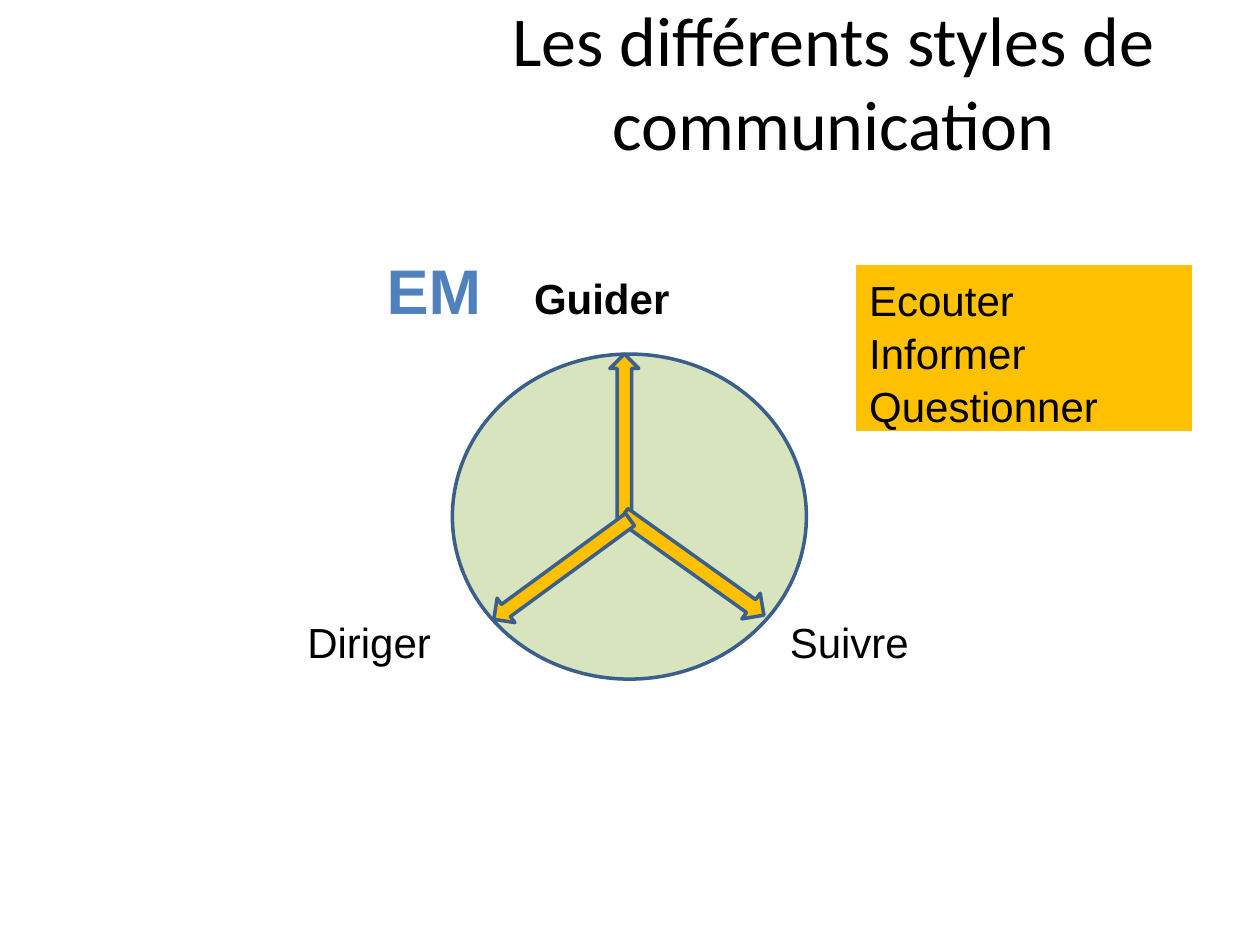
from dataclasses import dataclass

from pptx import Presentation
from pptx.dml.color import RGBColor
from pptx.enum.shapes import MSO_SHAPE
from pptx.enum.text import MSO_ANCHOR, MSO_AUTO_SIZE, PP_ALIGN
from pptx.util import Inches, Pt


@dataclass(frozen=True)
class Theme:
    ink: RGBColor = RGBColor(0, 0, 0)
    blue: RGBColor = RGBColor(0x4F, 0x81, 0xBD)
    edge: RGBColor = RGBColor(0x3A, 0x5F, 0x8C)
    green: RGBColor = RGBColor(0xD7, 0xE4, 0xBD)
    gold: RGBColor = RGBColor(0xFF, 0xC0, 0x00)
    head: int = 40
    mark: int = 36
    body: int = 24


THEME = Theme()
Box = tuple[float, float, float, float]


@dataclass(frozen=True)
class Form:
    kind: MSO_SHAPE
    box: Box
    fill: RGBColor = THEME.gold
    edge: RGBColor = THEME.edge
    width: float = 2
    turn: float = 0


@dataclass(frozen=True)
class Label:
    text: str
    box: Box
    size: int = THEME.body
    color: RGBColor = THEME.ink
    bold: bool = False


def place(box: Box) -> list[int]:
    return [Inches(v) for v in box]


def write(frame, text: str, size: int, color: RGBColor,
          bold: bool = False, name: str = "Arial",
          align: PP_ALIGN = PP_ALIGN.LEFT) -> None:
    frame.text = text
    frame.word_wrap = True
    for para in frame.paragraphs:
        para.alignment = align
        for run in para.runs:
            font = run.font
            font.name, font.size, font.bold = name, Pt(size), bold
            font.color.rgb = color


def draw(slide, form: Form):
    shape = slide.shapes.add_shape(form.kind, *place(form.box))
    shape.shadow.inherit = False
    shape.rotation = form.turn
    shape.fill.solid()
    shape.fill.fore_color.rgb = form.fill
    shape.line.color.rgb = form.edge
    shape.line.width = Pt(form.width)
    return shape


def label(slide, item: Label) -> None:
    frame = slide.shapes.add_textbox(*place(item.box)).text_frame
    write(frame, item.text, item.size, item.color, item.bold)


# Circle and its three arrows
WHEEL = [
    Form(MSO_SHAPE.FLOWCHART_CONNECTOR, (3.59, 2.81, 2.81, 2.58), THEME.green),
    Form(MSO_SHAPE.UP_ARROW, (4.84, 2.81, 0.23, 1.33)),
    Form(MSO_SHAPE.RIGHT_ARROW, (4.82, 4.36, 1.37, 0.25), turn=35.5),
    Form(MSO_SHAPE.LEFT_ARROW, (3.79, 4.4, 1.34, 0.24), turn=323.8),
]
PANEL = Form(MSO_SHAPE.RECTANGLE, (6.8, 2.11, 2.66, 1.31),
             edge=THEME.gold, width=0.75)
LABELS = [
    Label("Guider", (4.14, 2.11, 1.41, 0.51), bold=True),
    Label("Suivre", (6.17, 4.84, 1.33, 0.51)),
    Label("EM", (2.97, 1.95, 1.02, 0.71), THEME.mark, THEME.blue, True),
    Label("Diriger", (2.34, 4.84, 1.41, 0.51)),
]


def main() -> None:
    deck = Presentation()
    deck.slide_width, deck.slide_height = Inches(10), Inches(7.5)
    slide = deck.slides.add_slide(deck.slide_layouts[5])

    # Title
    title = slide.shapes.title
    title.left, title.top, title.width, title.height = place(
        (2.96, 0.17, 7.31, 0.94))
    frame = title.text_frame
    write(frame, "Les différents styles de communication", THEME.head,
          THEME.ink, name="Calibri", align=PP_ALIGN.CENTER)
    frame.auto_size = MSO_AUTO_SIZE.NONE
    frame.vertical_anchor = MSO_ANCHOR.MIDDLE

    for form in WHEEL:
        draw(slide, form)
    for item in LABELS:
        label(slide, item)

    # Skills panel
    frame = draw(slide, PANEL).text_frame
    write(frame, "Ecouter\nInformer\nQuestionner", THEME.body, THEME.ink)
    frame.vertical_anchor = MSO_ANCHOR.TOP
    for para in frame.paragraphs:
        para.line_spacing = 1.05

    deck.save("out.pptx")


if __name__ == "__main__":
    main()
